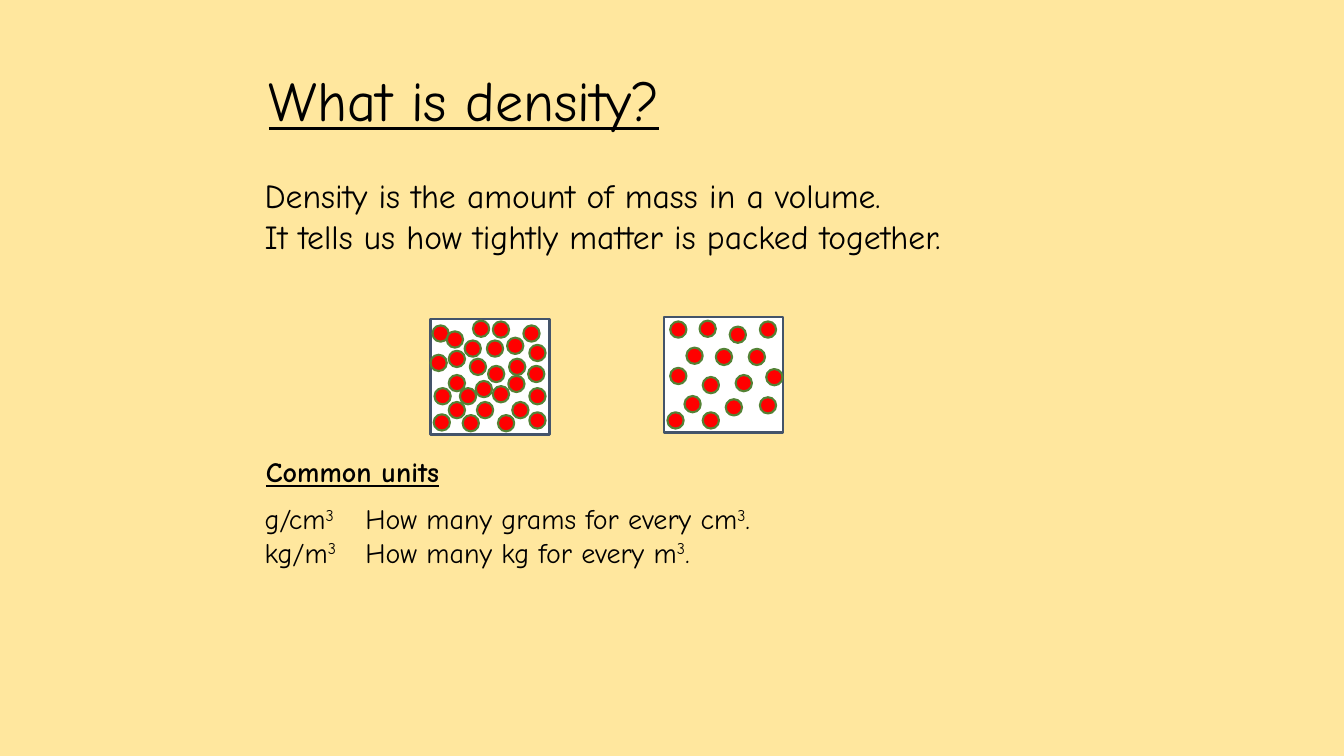
from dataclasses import dataclass

from pptx import Presentation
from pptx.dml.color import RGBColor
from pptx.enum.shapes import MSO_SHAPE as Preset
from pptx.enum.text import MSO_AUTO_SIZE as AutoSize
from pptx.util import Cm, Pt

SAND = RGBColor(0xFF, 0xE7, 0x9E)
WHITE = RGBColor(0xFF, 0xFF, 0xFF)
BLACK = RGBColor(0x00, 0x00, 0x00)
RED = RGBColor(0xFF, 0x00, 0x00)
GREEN = RGBColor(0x54, 0x82, 0x35)
SLATE = RGBColor(0x44, 0x54, 0x6A)

FONT = "Comic Neue"
BOX_WIDTH, BOX_HEIGHT = 3.0, 2.9
PARTICLE_SIZE = 0.41
TEXT_INDENT = 0.3


@dataclass(frozen=True)
class Container:
    """A box of particles; particle corners are offsets from the box corner, in cm."""
    left: float
    top: float
    particles: tuple[tuple[float, float], ...]


@dataclass(frozen=True)
class Passage:
    """A text box in cm; each line is split at ^ into alternating normal and raised text."""
    left: float
    top: float
    width: float
    height: float
    lines: tuple[str, ...]
    style: dict
    wrap: bool = True
    indent: float = TEXT_INDENT


SPARSE = Container(16.74, 8.0, (
    (2.41, 0.1), (0.15, 0.1), (0.89, 0.08), (1.65, 0.23),
    (0.56, 0.76), (1.3, 0.79), (2.13, 0.79), (0.15, 1.27),
    (0.97, 1.5), (1.8, 1.45), (2.57, 1.3), (0.51, 1.98),
    (1.55, 2.06), (2.41, 2.01), (0.97, 2.39), (0.08, 2.39),
))
DENSE = Container(10.85, 8.05, (
    (0.05, 0.15), (0.41, 0.3), (0.99, 0.99), (1.45, 1.17), (1.57, 1.68),
    (2.06, 2.08), (2.49, 2.34), (1.07, 0.03), (1.42, 0.53), (1.93, 0.46),
    (1.98, 0.99), (2.49, 1.73), (1.57, 0.05), (2.34, 0.15), (2.49, 0.64),
    (0, 0.89), (0.46, 1.4), (0.74, 1.73), (1.17, 2.08), (1.7, 2.41),
    (0.1, 1.73), (0.46, 2.08), (0.81, 2.41), (0.08, 2.39), (0.46, 0.79),
    (1.14, 1.55), (1.96, 1.42), (0.86, 0.53), (2.46, 1.17),
))

PASSAGES = (
    Passage(6.53, 1.52, 11.79, 1.96, ("What is density?",),
            {"size": Pt(40), "underline": True}, wrap=False, indent=0),
    Passage(6.12, 4.29, 22.61, 2.31,
            ("Density is the amount of mass in a volume.",
             "It tells us how tightly matter is packed together."),
            {"size": Pt(24)}),
    Passage(6.15, 11.33, 5.41, 1.12, ("Common units",),
            {"size": Pt(20), "bold": True, "underline": True}, wrap=False),
    Passage(6.12, 12.52, 15.01, 1.96,
            ("g/cm^3^\tHow many grams for every cm^3^.",
             "kg/m^3\t^How many kg for every m^3^."),
            {"size": Pt(20)}),
)


def draw_shape(shapes, preset: Preset, left: float, top: float,
               width: float, height: float, fill: RGBColor, outline: RGBColor) -> None:
    shape = shapes.add_shape(preset, Cm(left), Cm(top), Cm(width), Cm(height))
    shape.shadow.inherit = False
    shape.fill.solid()
    shape.fill.fore_color.rgb = fill
    shape.line.color.rgb = outline
    shape.line.width = Pt(1.5)


def draw_container(slide, container: Container) -> None:
    shapes = slide.shapes.add_group_shape().shapes
    draw_shape(shapes, Preset.RECTANGLE, container.left, container.top,
               BOX_WIDTH, BOX_HEIGHT, WHITE, SLATE)
    for dx, dy in container.particles:
        draw_shape(shapes, Preset.OVAL, container.left + dx, container.top + dy,
                   PARTICLE_SIZE, PARTICLE_SIZE, RED, GREEN)


def write_passage(slide, passage: Passage) -> None:
    frame = slide.shapes.add_textbox(Cm(passage.left), Cm(passage.top),
                                     Cm(passage.width), Cm(passage.height)).text_frame
    frame.word_wrap = passage.wrap
    frame.auto_size = AutoSize.SHAPE_TO_FIT_TEXT
    for index, line in enumerate(passage.lines):
        paragraph = frame.add_paragraph() if index else frame.paragraphs[0]
        properties = paragraph._p.get_or_add_pPr()
        properties.set("marL", str(Cm(passage.indent)))
        properties.set("indent", "0")
        for position, piece in enumerate(line.split("^")):
            run = paragraph.add_run()
            run.text = piece
            for attribute, value in {"name": FONT, **passage.style}.items():
                setattr(run.font, attribute, value)
            run.font.color.rgb = BLACK
            if position % 2:
                run._r.get_or_add_rPr().set("baseline", "30000")


def main() -> None:
    presentation = Presentation()
    presentation.slide_width, presentation.slide_height = Cm(33.87), Cm(19.05)
    slide = presentation.slides.add_slide(presentation.slide_layouts[6])
    slide.background.fill.solid()
    slide.background.fill.fore_color.rgb = SAND

    # Particle boxes
    for container in (SPARSE, DENSE):
        draw_container(slide, container)

    # Title, definition and units
    for passage in PASSAGES:
        write_passage(slide, passage)

    presentation.save("out.pptx")


if __name__ == "__main__":
    main()
